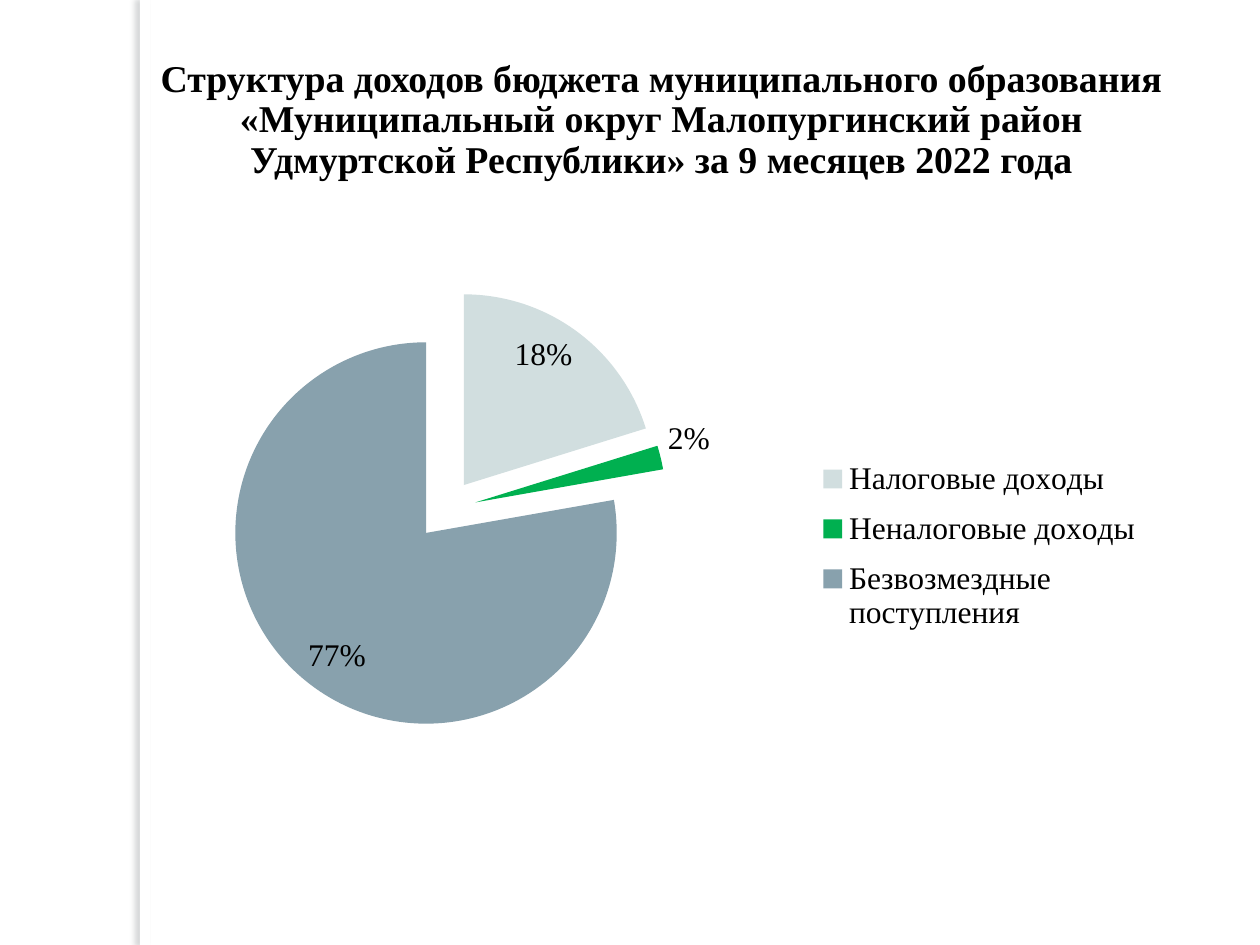
from dataclasses import dataclass

from lxml import etree
from pptx import Presentation
from pptx.chart.data import CategoryChartData
from pptx.dml.color import RGBColor
from pptx.enum.chart import XL_CHART_TYPE, XL_LABEL_POSITION, XL_LEGEND_POSITION
from pptx.enum.shapes import MSO_SHAPE
from pptx.enum.text import MSO_ANCHOR, PP_ALIGN
from pptx.oxml import parse_xml
from pptx.oxml.ns import nsdecls, qn
from pptx.util import Pt

PIE = XL_CHART_TYPE.PIE
INSIDE_END = XL_LABEL_POSITION.INSIDE_END
OUTSIDE_END = XL_LABEL_POSITION.OUTSIDE_END
LEGEND_RIGHT = XL_LEGEND_POSITION.RIGHT
RECTANGLE = MSO_SHAPE.RECTANGLE
MIDDLE = MSO_ANCHOR.MIDDLE
CENTER = PP_ALIGN.CENTER


@dataclass(frozen=True)
class Theme:
    paper: str = "FFFFFF"
    ink: str = "000000"
    shadow: str = "61686B"
    font: str = "Times New Roman"
    chart_font: str = "Cabin"
    title_size: float = 21.6
    chart_size: float = 18


@dataclass(frozen=True)
class Box:
    left: float
    top: float
    width: float
    height: float

    def in_points(self):
        return Pt(self.left), Pt(self.top), Pt(self.width), Pt(self.height)


@dataclass(frozen=True)
class Income:
    name: str
    value: int
    label: str
    color: str
    position: XL_LABEL_POSITION


THEME = Theme()
TITLE = ("Структура доходов бюджета муниципального образования "
         "«Муниципальный округ Малопургинский район\v"
         "Удмуртской Республики» за 9 месяцев 2022 года")
INCOMES = [
    Income("Налоговые доходы", 20, "18%", "D1DEDF", INSIDE_END),
    Income("Неналоговые доходы", 2, "2%", "00B050", OUTSIDE_END),
    Income("Безвозмездные поступления", 77, "77%", "88A1AD", INSIDE_END),
]
EXPLOSION = 16
PLOT_AREA = Box(0.12, 0.18, 0.46, 0.63)
LEGEND_AREA = Box(0.67, 0.39, 0.31, 0.33)


def style_font(font, name: str, size: float, bold: bool = False) -> None:
    font.name = name
    font.size = Pt(size)
    font.bold = bold
    font.color.rgb = RGBColor.from_string(THEME.ink)


def add_side_strip(slide, box: Box) -> None:
    sp = slide.shapes.add_shape(RECTANGLE, *box.in_points())
    sp.fill.solid()
    sp.fill.fore_color.rgb = RGBColor.from_string(THEME.paper)
    sp.line.fill.background()
    sp.shadow.inherit = False
    effects = sp._element.spPr.find(qn("a:effectLst"))
    effects.append(parse_xml(
        f'<a:outerShdw {nsdecls("a")} blurRad="{Pt(3)}" dist="{Pt(3)}" '
        f'dir="{180 * 60000}" algn="ctr" rotWithShape="0">'
        f'<a:srgbClr val="{THEME.shadow}"><a:alpha val="25000"/></a:srgbClr>'
        '</a:outerShdw>'))


def add_title(slide, box: Box, text: str) -> None:
    tf = slide.shapes.add_textbox(*box.in_points()).text_frame
    tf.word_wrap = True
    tf.vertical_anchor = MIDDLE
    p = tf.paragraphs[0]
    p.text = text
    p.alignment = CENTER
    p.line_spacing = 0.9
    for r in p.runs:
        style_font(r.font, THEME.font, THEME.title_size, bold=True)


def make_layout(area: Box, inner: bool = False):
    """Return a manual chart layout; the area is in fractions of the chart."""
    target = '<c:layoutTarget val="inner"/>' if inner else ""
    return parse_xml(
        f'<c:layout {nsdecls("c")}><c:manualLayout>{target}'
        '<c:xMode val="edge"/><c:yMode val="edge"/>'
        f'<c:x val="{area.left}"/><c:y val="{area.top}"/>'
        f'<c:w val="{area.width}"/><c:h val="{area.height}"/>'
        '</c:manualLayout></c:layout>')


def style_slice(point, income: Income) -> None:
    point.format.fill.solid()
    point.format.fill.fore_color.rgb = RGBColor.from_string(income.color)
    tf = point.data_label.text_frame
    tf.text = income.label
    style_font(tf.paragraphs[0].runs[0].font, THEME.font, THEME.chart_size)
    point.data_label.position = income.position


def add_income_pie(slide, box: Box, incomes: list[Income]) -> None:
    data = CategoryChartData()
    data.categories = [income.name for income in incomes]
    data.add_series("Series 1", [income.value for income in incomes])
    chart = slide.shapes.add_chart(PIE, *box.in_points(), data).chart
    chart.has_title = False
    style_font(chart.font, THEME.chart_font, THEME.chart_size)

    plot = chart.plots[0]
    plot.vary_by_categories = True
    series = plot.series[0]
    for i, income in enumerate(incomes):
        style_slice(series.points[i], income)
    for point in series._element.findall(qn("c:dPt")):
        explosion = etree.Element(qn("c:explosion"), val=str(EXPLOSION))
        point.find(qn("c:spPr")).addprevious(explosion)

    chart.has_legend = True
    legend = chart.legend
    legend.position = LEGEND_RIGHT
    legend.include_in_layout = False
    style_font(legend.font, THEME.font, THEME.chart_size)

    for old in list(chart._chartSpace.iter(qn("c:layout"))):
        old.getparent().remove(old)
    plot_area = chart._chartSpace.chart.plotArea
    plot_area.insert(0, make_layout(PLOT_AREA, inner=True))
    legend._element.find(qn("c:legendPos")).addnext(make_layout(LEGEND_AREA))


def main() -> None:
    prs = Presentation()
    prs.slide_width, prs.slide_height = Pt(720), Pt(540)
    slide = prs.slides.add_slide(prs.slide_layouts[6])
    slide.background.fill.solid()
    slide.background.fill.fore_color.rgb = RGBColor.from_string(THEME.paper)
    add_side_strip(slide, Box(80, 0, 6, 540))
    add_title(slide, Box(54, 24, 648, 90), TITLE)
    add_income_pie(slide, Box(30, 120, 642, 346), INCOMES)
    prs.save("out.pptx")


if __name__ == "__main__":
    main()
